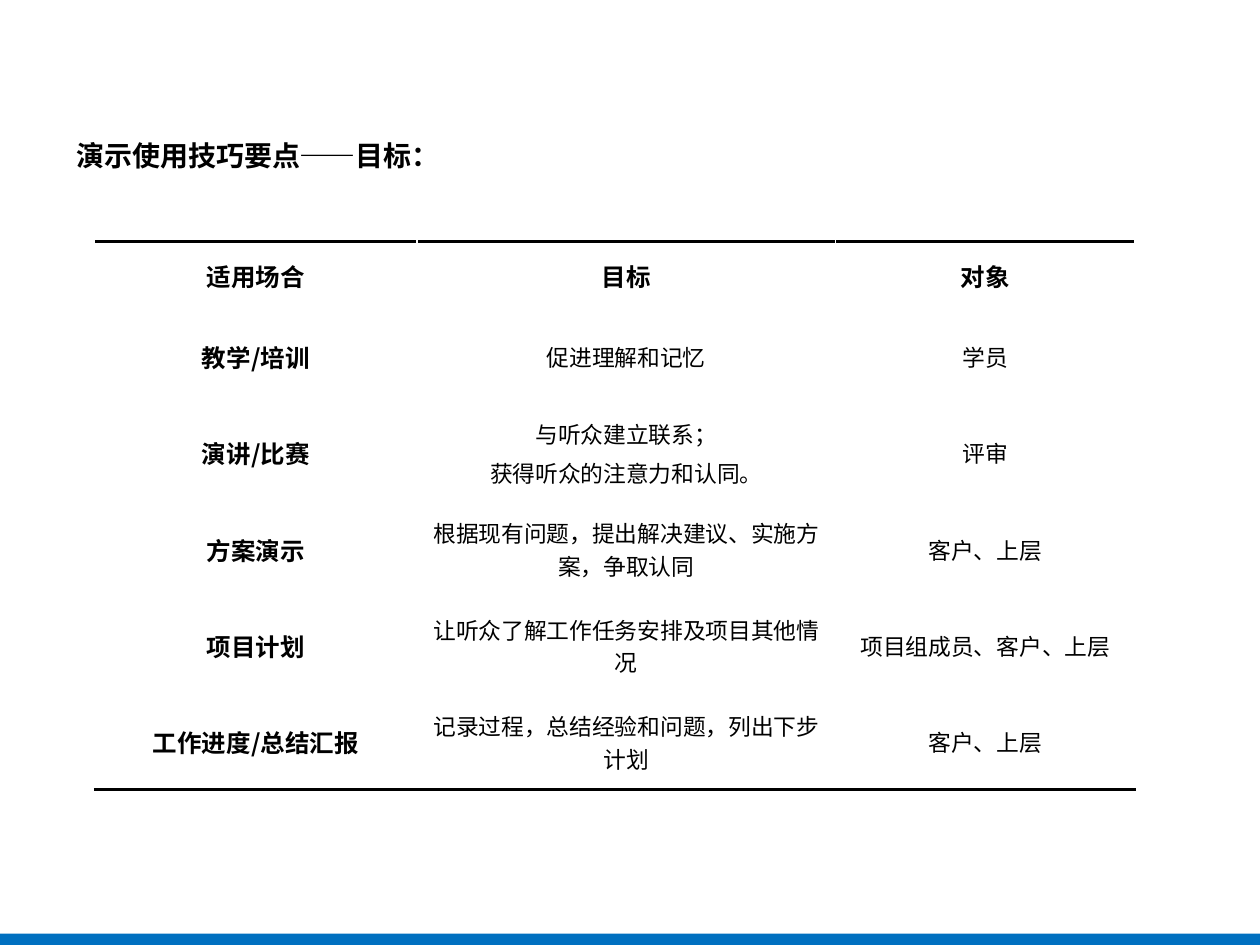
from lxml.etree import SubElement
from pptx import Presentation
from pptx.dml.color import RGBColor
from pptx.enum.shapes import MSO_SHAPE as Shape
from pptx.enum.text import MSO_ANCHOR as Anchor, MSO_AUTO_SIZE as AutoSize, PP_ALIGN as Align
from pptx.oxml import parse_xml
from pptx.oxml.ns import nsdecls, qn
from pptx.util import Inches, Pt

BLACK = RGBColor(0x00, 0x00, 0x00)
WHITE = RGBColor(0xFF, 0xFF, 0xFF)
BLUE = RGBColor(0x00, 0x70, 0xC0)
FONT = "Noto Sans CJK SC"

TITLE = "演示使用技巧要点——目标："
ROWS = [
    ("适用场合", "目标", "对象"),
    ("教学/培训", "促进理解和记忆", "学员"),
    ("演讲/比赛", "与听众建立联系；\n获得听众的注意力和认同。", "评审"),
    ("方案演示", "根据现有问题，提出解决建议、实施方案，争取认同", "客户、上层"),
    ("项目计划", "让听众了解工作任务安排及项目其他情况", "项目组成员、客户、上层"),
    ("工作进度/总结汇报", "记录过程，总结经验和问题，列出下步计划", "客户、上层"),
]
COL_WIDTHS = (2.56, 3.32, 2.38)
HEADER_HEIGHT, ROW_HEIGHT = 0.53, 0.764
TABLE_LEFT, TABLE_TOP = 0.75, 1.92
BAR_HEIGHT = 0.09


def write(tf, text, size=13, bold=False, align=Align.CENTER,
          line=1.0, before=0.0, after=0.0):
    """Fill a text frame, one paragraph per line; before and after are shares of size."""
    for i, content in enumerate(text.split("\n")):
        p = tf.paragraphs[0] if i == 0 else tf.add_paragraph()
        p.alignment, p.line_spacing = align, line
        p.space_before, p.space_after = Pt(size * before), Pt(size * after)
        r = p.add_run()
        r.text = content
        r.font.size, r.font.bold, r.font.name = Pt(size), bold, FONT
        r.font.color.rgb = BLACK
        SubElement(r.font._element, qn("a:ea"), typeface=FONT)


def add_rule(cell, side):
    """Draw a 2 pt border on the cell's T (top) or B (bottom) side."""
    border = parse_xml(
        f'<a:ln{side} {nsdecls("a")} w="{Pt(2)}"><a:solidFill>'
        f'<a:srgbClr val="{BLACK}"/></a:solidFill></a:ln{side}>')
    cell._tc.get_or_add_tcPr().insert(0, border)


def add_title(s):
    title = s.shapes.title
    title.left, title.top = Inches(0.51), Inches(0.92)
    title.width, title.height = Inches(8.98), Inches(0.5)
    tf = title.text_frame
    tf.word_wrap, tf.auto_size = True, AutoSize.NONE
    tf.vertical_anchor = Anchor.TOP
    write(tf, TITLE, size=16, bold=True, align=Align.LEFT, line=1.5)


def add_goal_table(s):
    heights = [HEADER_HEIGHT] + [ROW_HEIGHT] * (len(ROWS) - 1)
    table = s.shapes.add_table(
        len(ROWS), len(COL_WIDTHS), Inches(TABLE_LEFT), Inches(TABLE_TOP),
        Inches(sum(COL_WIDTHS)), Inches(sum(heights))).table
    table.first_row = table.horz_banding = False
    for column, width in zip(table.columns, COL_WIDTHS):
        column.width = Inches(width)
    for i, (row, height) in enumerate(zip(ROWS, heights)):
        table.rows[i].height = Inches(height)
        for j, text in enumerate(row):
            cell = table.cell(i, j)
            cell.vertical_anchor = Anchor.MIDDLE
            cell.fill.solid()
            cell.fill.fore_color.rgb = WHITE
            heading = i == 0 or j == 0
            write(cell.text_frame, text, size=14 if heading else 13, bold=heading,
                  before=0 if "\n" in text else 0.2, after=0.25)
            if i == 0:
                add_rule(cell, "T")
            elif i == len(ROWS) - 1:
                add_rule(cell, "B")


def add_bottom_bar(s, prs):
    height = Inches(BAR_HEIGHT)
    bar = s.shapes.add_shape(
        Shape.RECTANGLE, 0, prs.slide_height - height, prs.slide_width, height)
    bar.shadow.inherit = False
    bar.fill.solid()
    bar.fill.fore_color.rgb = BLUE
    bar.line.fill.background()


def main():
    prs = Presentation()
    prs.slide_width, prs.slide_height = Inches(10), Inches(7.5)
    s = prs.slides.add_slide(prs.slide_layouts[5])
    add_title(s)
    add_goal_table(s)
    add_bottom_bar(s, prs)
    prs.save("out.pptx")


if __name__ == "__main__":
    main()
